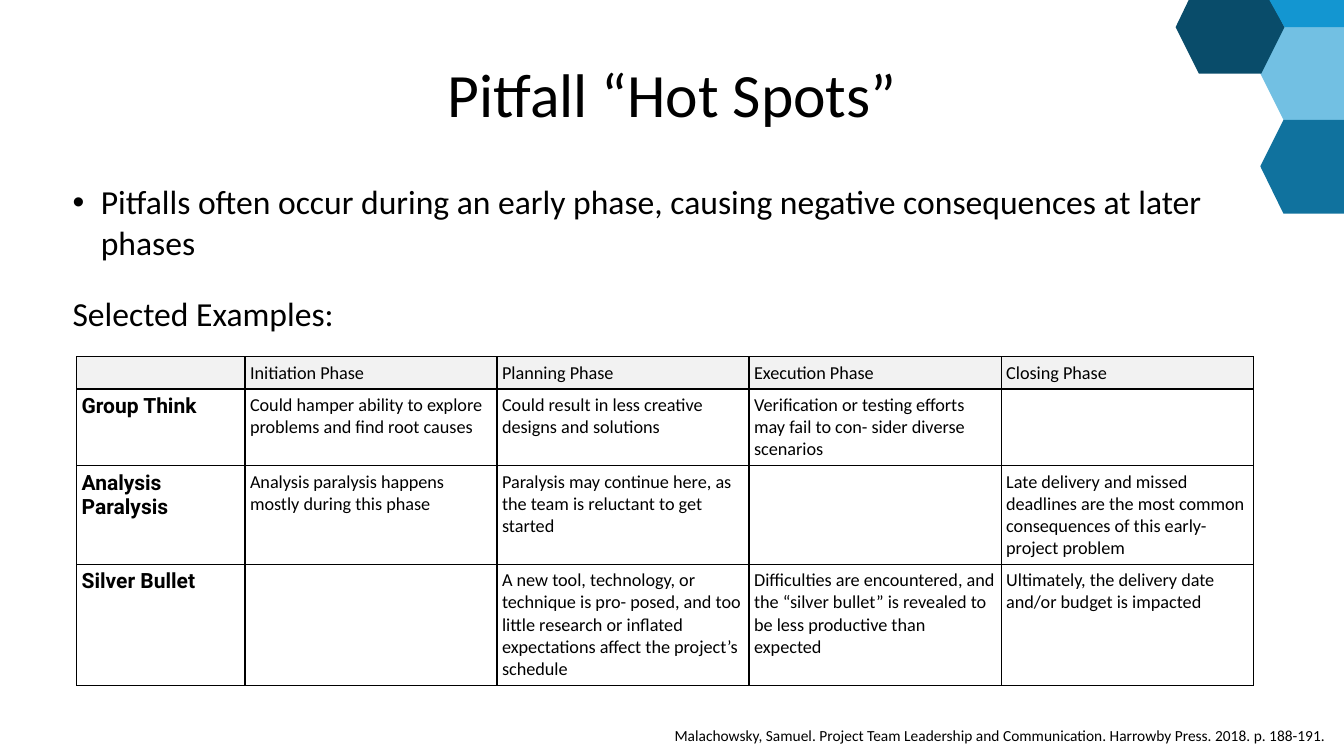
from dataclasses import dataclass

from lxml.etree import SubElement
from pptx import Presentation
from pptx.dml.color import RGBColor
from pptx.enum.text import MSO_ANCHOR as Anchor, PP_ALIGN as Align
from pptx.oxml.ns import qn
from pptx.util import Inches, Pt


@dataclass(frozen=True)
class Theme:
    ink: str = "000000"
    head: str = "F2F2F2"
    sky: str = "72C0E3"
    blue: str = "10729E"
    navy: str = "094C6A"
    azure: str = "1396D1"
    font: str = "Calibri"
    label: str = "Roboto"
    title: int = 44
    body: int = 24
    name: int = 15
    cell: int = 13
    note: int = 11


THEME = Theme()
PAD = 0.05

HEXES = [
    (THEME.sky, [(12.5, 0.73), (12.73, 0.26), (13.33, 0.26), (13.33, 1.19), (12.73, 1.19)]),
    (THEME.blue, [(12.5, 1.65), (12.73, 1.19), (13.33, 1.19), (13.33, 2.12), (12.73, 2.12)]),
    (THEME.navy, [(11.66, 0.27), (11.79, 0), (12.61, 0), (12.74, 0.27), (12.51, 0.73), (11.89, 0.73)]),
    (THEME.azure, [(12.59, 0), (13.33, 0), (13.33, 0.27), (12.74, 0.27)]),
]

COLS = [1.67] + [2.5] * 4
ROWS = [0.32, 0.76, 0.98, 1.2]
CELLS = [
    ["", "Initiation Phase", "Planning Phase", "Execution Phase", "Closing Phase"],
    [
        "Group Think",
        "Could hamper ability to explore problems and find root causes",
        "Could result in less creative designs and solutions",
        "Verification or testing efforts may fail to con- sider diverse scenarios",
        "",
    ],
    [
        "Analysis Paralysis",
        "Analysis paralysis happens mostly during this phase",
        "Paralysis may continue here, as the team is reluctant to get started",
        "",
        "Late delivery and missed deadlines are the most common consequences "
        "of this early-project problem",
    ],
    [
        "Silver Bullet",
        "",
        "A new tool, technology, or technique is pro- posed, and too little research "
        "or inflated expectations affect the project’s schedule",
        "Difficulties are encountered, and the “silver bullet” is revealed "
        "to be less productive than expected",
        "Ultimately, the delivery date and/or budget is impacted",
    ],
]


def style(font, size, name=THEME.font, bold=False):
    font.size = Pt(size)
    font.name = name
    font.bold = bold
    font.color.rgb = RGBColor.from_string(THEME.ink)


def pad(box):
    box.margin_left = box.margin_right = Inches(PAD)
    box.margin_top = box.margin_bottom = Inches(PAD)


def add_hex(slide, color, points):
    dots = [(Inches(x), Inches(y)) for x, y in points]
    pen = slide.shapes.build_freeform(*dots[0])
    pen.add_line_segments(dots[1:], close=True)
    shape = pen.convert_to_shape()
    shape.shadow.inherit = False
    shape.fill.solid()
    shape.fill.fore_color.rgb = RGBColor.from_string(color)
    shape.line.fill.background()


def add_text(slide, area, lines, size, align=Align.LEFT, anchor=Anchor.TOP):
    frame = slide.shapes.add_textbox(*map(Inches, area)).text_frame
    frame.word_wrap = True
    frame.vertical_anchor = anchor
    pad(frame)
    frame.text = "\n".join(lines)
    for para in frame.paragraphs:
        para.alignment = align
        style(para.runs[0].font, size)
    return frame


def add_bullet(para, indent):
    props = para._p.get_or_add_pPr()
    props.set("marL", str(Inches(indent)))
    props.set("indent", str(-Inches(indent)))
    SubElement(props, qn("a:buFont")).set("typeface", "Arial")
    SubElement(props, qn("a:buChar")).set("char", "•")


def add_edges(cell):
    """Draw the four borders, placed ahead of the fill as the schema asks."""
    props = cell._tc.get_or_add_tcPr()
    for spot, tag in enumerate(("a:lnL", "a:lnR", "a:lnT", "a:lnB")):
        line = SubElement(props, qn(tag), w=str(Pt(1)))
        fill = SubElement(line, qn("a:solidFill"))
        SubElement(fill, qn("a:srgbClr"), val=THEME.ink)
        props.insert(spot, line)


def fill_cell(cell, text, head, label):
    cell.text = text
    pad(cell)
    para = cell.text_frame.paragraphs[0]
    look = (THEME.name, THEME.label, True) if label else (THEME.cell,)
    for part in [para, *para.runs]:
        style(part.font, *look)
    if head:
        cell.fill.solid()
        cell.fill.fore_color.rgb = RGBColor.from_string(THEME.head)
    else:
        cell.fill.background()
    add_edges(cell)


def add_grid(slide, left, top):
    area = map(Inches, (left, top, sum(COLS), sum(ROWS)))
    table = slide.shapes.add_table(len(ROWS), len(COLS), *area).table
    table.first_row = table.horz_banding = False
    for col, width in zip(table.columns, COLS):
        col.width = Inches(width)
    for row, height in zip(table.rows, ROWS):
        row.height = Inches(height)
    for r, texts in enumerate(CELLS):
        for c, text in enumerate(texts):
            fill_cell(table.cell(r, c), text, r == 0, r > 0 and c == 0)


def main():
    deck = Presentation()
    deck.slide_width, deck.slide_height = Inches(13.33), Inches(7.5)
    slide = deck.slides.add_slide(deck.slide_layouts[6])

    for color, points in HEXES:
        add_hex(slide, color, points)

    body = add_text(slide, (0.67, 1.75, 12, 2.07), [
        "Pitfalls often occur during an early phase, causing negative consequences at later phases",
        "Selected Examples:",
    ], THEME.body)
    lead, intro = body.paragraphs
    lead.space_before = Pt(5)
    intro.space_before = Pt(22)
    add_bullet(lead, 0.28)

    add_text(slide, (0.67, 0.3, 12, 1.25), ["Pitfall “Hot Spots”"],
             THEME.title, Align.CENTER, Anchor.MIDDLE)
    add_grid(slide, 0.76, 3.54)
    cite = add_text(slide, (0.13, 7.15, 13.12, 0.29), [
        "Malachowsky, Samuel. Project Team Leadership and Communication. "
        "Harrowby Press. 2018. p. 188-191.",
    ], THEME.note, Align.RIGHT)
    cite.margin_left = cite.margin_right = Inches(0.1)
    deck.save("out.pptx")


if __name__ == "__main__":
    main()
